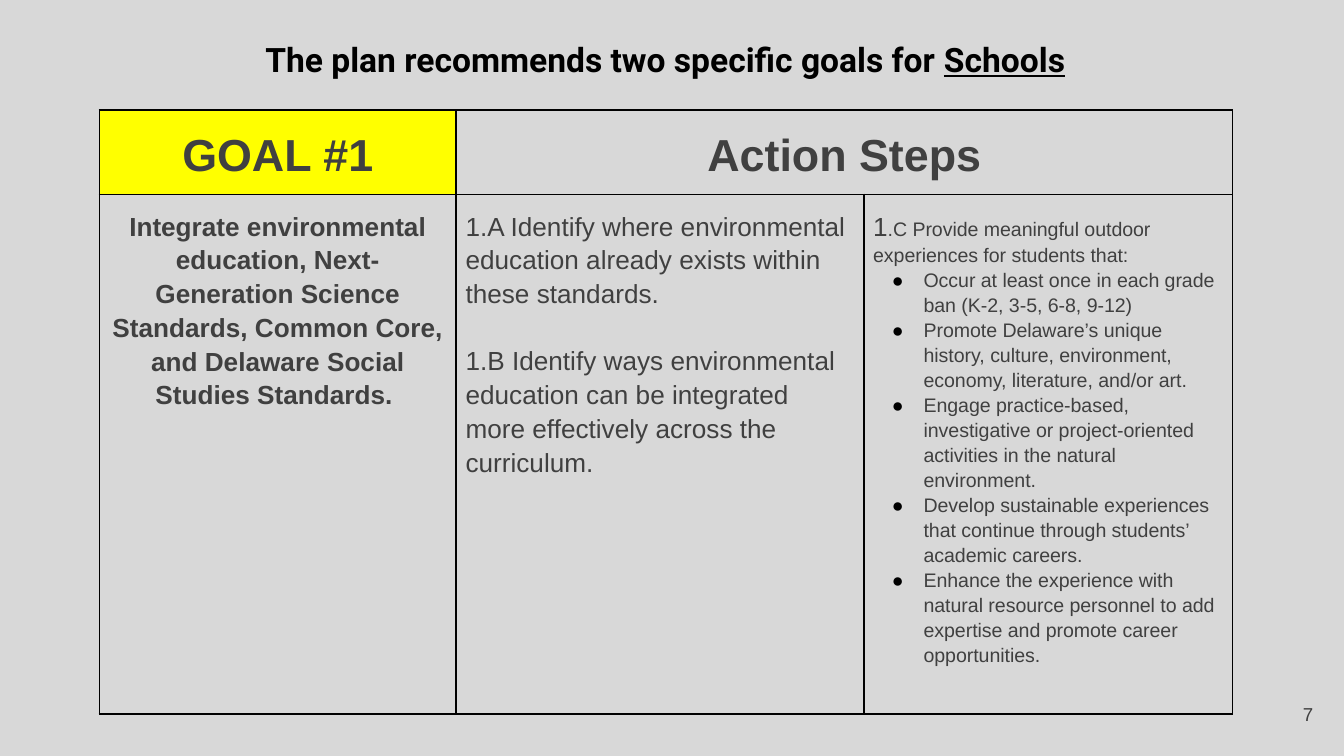
from dataclasses import dataclass

from lxml.etree import SubElement as Sub
from pptx import Presentation
from pptx.dml.color import RGBColor as Rgb
from pptx.enum.text import MSO_ANCHOR as Anchor, PP_ALIGN as Align
from pptx.oxml import parse_xml
from pptx.oxml.ns import nsdecls, qn
from pptx.util import Pt


@dataclass(frozen=True)
class Theme:
    back: str = "D8D8D8"
    ink: str = "000000"
    text: str = "404040"
    mark: str = "FFFF00"
    sans: str = "Arial"
    head: str = "Roboto"
    title: float = 18
    goal: float = 24
    body: float = 14
    small: float = 10.5
    page: float = 10
    lead: float = 1.15


class Deck:
    def __init__(self, theme):
        self.theme = theme
        self.prs = Presentation()
        self.prs.slide_width, self.prs.slide_height = Pt(720), Pt(405)
        self.slide = self.prs.slides.add_slide(self.prs.slide_layouts[5])
        fill = self.slide.background.fill
        fill.solid()
        fill.fore_color.rgb = Rgb.from_string(theme.back)

    def run(self, para, text, size, bold=False, line=False, font=None, color=None):
        run = para.add_run()
        run.text = text
        face = run.font
        face.size, face.bold = Pt(size), bold
        face.name = font or self.theme.sans
        face.color.rgb = Rgb.from_string(color or self.theme.text)
        if line:
            face.underline = True

    def frame(self, shape, box, anchor):
        """Place a shape, give it even margins and return its first paragraph."""
        shape.left, shape.top, shape.width, shape.height = map(Pt, box)
        area = shape.text_frame
        area.word_wrap, area.vertical_anchor = True, anchor
        area.margin_left = area.margin_right = Pt(7.2)
        area.margin_top = area.margin_bottom = Pt(7.2)
        return area.paragraphs[0]

    def title(self, box, parts):
        para = self.frame(self.slide.shapes.title, box, Anchor.TOP)
        para.alignment = Align.CENTER
        look = self.theme
        for text, line in parts:
            self.run(para, text, look.title, True, line, look.head, look.ink)

    def page(self, box, text):
        shape = self.slide.shapes.add_textbox(*map(Pt, box))
        para = self.frame(shape, box, Anchor.MIDDLE)
        para.alignment = Align.RIGHT
        self.run(para, text, self.theme.page)

    def table(self, left, top, cols, rows):
        box = map(Pt, (left, top, sum(cols), sum(rows)))
        grid = self.slide.shapes.add_table(len(rows), len(cols), *box).table
        grid.first_row = grid.horz_banding = False
        for col, width in zip(grid.columns, cols):
            col.width = Pt(width)
        for row, height in zip(grid.rows, rows):
            row.height = Pt(height)
        for cell in grid.iter_cells():
            cell.margin_left = cell.margin_right = Pt(5)
            cell.margin_top = cell.margin_bottom = Pt(7.2)
            cell.fill.background()
            self.border(cell)
        return grid

    def border(self, cell):
        props = cell._tc.get_or_add_tcPr()
        for spot, side in enumerate(("lnL", "lnR", "lnT", "lnB")):
            props.insert(spot, parse_xml(
                f'<a:{side} {nsdecls("a")} w="{Pt(1)}"><a:solidFill>'
                f'<a:srgbClr val="{self.theme.ink}"/></a:solidFill></a:{side}>'))

    def para(self, cell, parts, align=Align.LEFT, bold=False, gap=0):
        """Add a paragraph of (text, size) parts, using an empty first one."""
        area = cell.text_frame
        para = area.paragraphs[0]
        if para.runs:
            para = area.add_paragraph()
        para.alignment, para.line_spacing = align, self.theme.lead
        para.space_before = Pt(gap)
        for text, size in parts:
            self.run(para, text, size, bold)
        return para

    def bullet(self, cell, text):
        para = self.para(cell, [(text, self.theme.small)])
        props = para._p.get_or_add_pPr()
        props.set("marL", str(Pt(27)))
        props.set("indent", str(Pt(-17)))
        tint = Sub(props, qn("a:buClr"))
        Sub(tint, qn("a:srgbClr"), val=self.theme.ink)
        Sub(props, qn("a:buFont"), typeface=self.theme.sans)
        Sub(props, qn("a:buChar"), char="●")


def main():
    look = Theme()
    deck = Deck(look)
    deck.title((0, 13.7, 712.8, 36), [
        ("The plan recommends two specific goals for ", False),
        ("Schools", True),
    ])

    grid = deck.table(53.2, 59, (191.2, 218.4, 197.4), (43.2, 278.2))
    goal, steps = grid.cell(0, 0), grid.cell(0, 1)
    steps.merge(grid.cell(0, 2))
    goal.fill.solid()
    goal.fill.fore_color.rgb = Rgb.from_string(look.mark)

    aim, plan, field = (grid.cell(1, col) for col in range(3))
    for cell, text, size in (
        (goal, "GOAL #1", look.goal),
        (steps, "Action Steps", look.goal),
        (aim, "Integrate environmental education, Next-Generation Science "
              "Standards, Common Core, and Delaware Social Studies "
              "Standards. ", look.body),
    ):
        deck.para(cell, [(text, size)], Align.CENTER, True)

    for text, gap in (
        ("1.A Identify where environmental education already exists within "
         "these standards.", 0),
        ("1.B Identify ways environmental education can be integrated more "
         "effectively across the curriculum.", 18),
    ):
        deck.para(plan, [(text, look.body)], gap=gap)

    deck.para(field, [
        ("1", look.body),
        (".C Provide meaningful outdoor experiences for students that:", look.small),
    ])
    for text in (
        "Occur at least once in each grade ban (K-2, 3-5, 6-8, 9-12)",
        "Promote Delaware’s unique history, culture, environment, economy, "
        "literature, and/or art.",
        "Engage practice-based, investigative or project-oriented activities "
        "in the natural environment.",
        "Develop sustainable experiences that continue through students’ "
        "academic careers.",
        "Enhance the experience with natural resource personnel to add "
        "expertise and promote career opportunities.",
    ):
        deck.bullet(field, text)

    deck.page((667.4, 367.2, 43.2, 31), "7")
    deck.prs.save("out.pptx")


if __name__ == "__main__":
    main()
